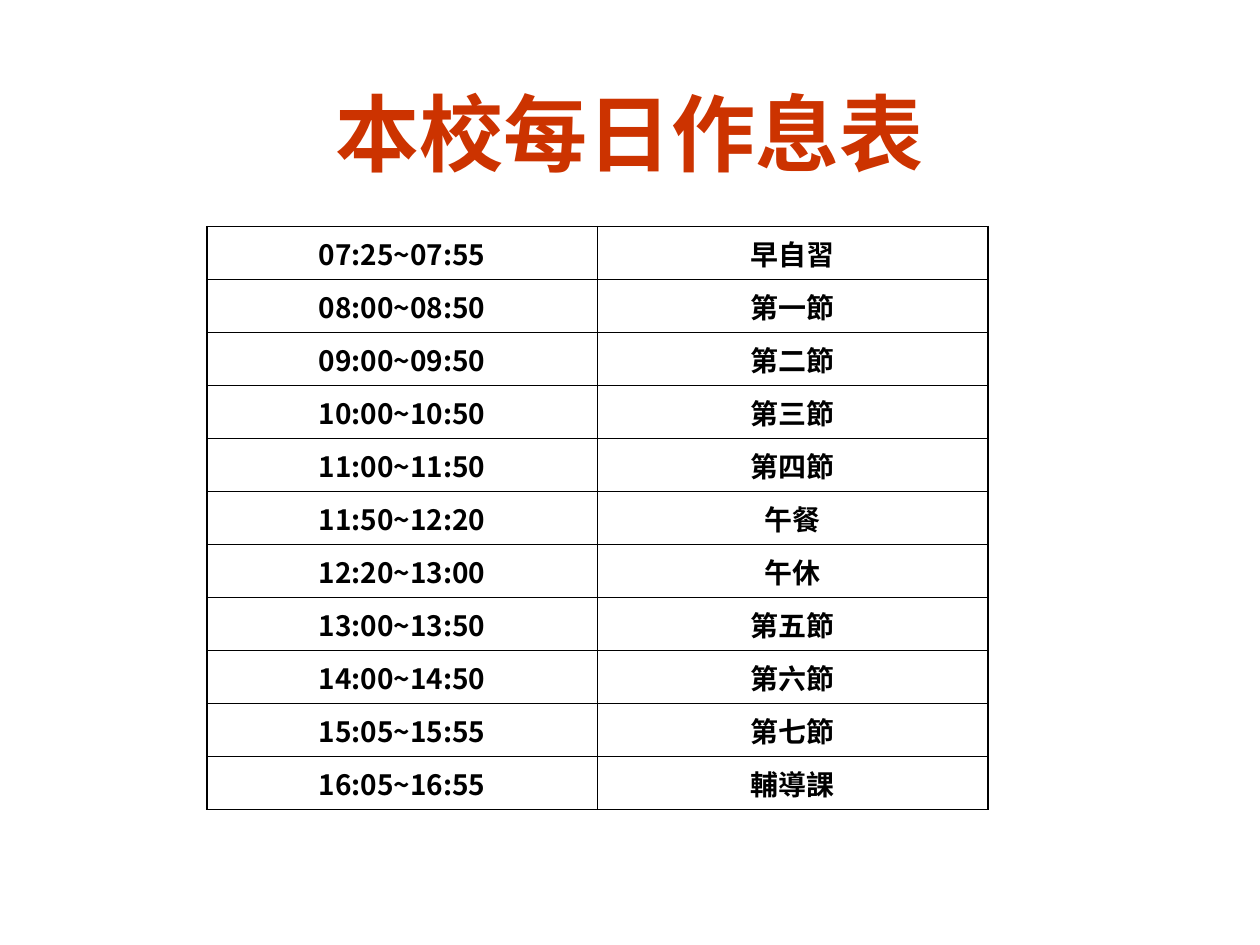
import pptx
import pptx.util
import pptx.dml.color
import pptx.enum.text
import pptx.oxml
import pptx.oxml.ns

Cm = pptx.util.Cm
Pt = pptx.util.Pt
TEXT = pptx.enum.text
HUES = {"title": "CC3300", "ink": "000000"}
EAST = "Noto Sans CJK SC"
HEAD = {"name": "Lato", "size": Pt(48), "bold": True}
BODY = {"name": EAST, "size": Pt(16), "bold": True}
HOURS = [
    ("07:25~07:55", "早自習"),
    ("08:00~08:50", "第一節"),
    ("09:00~09:50", "第二節"),
    ("10:00~10:50", "第三節"),
    ("11:00~11:50", "第四節"),
    ("11:50~12:20", "午餐"),
    ("12:20~13:00", "午休"),
    ("13:00~13:50", "第五節"),
    ("14:00~14:50", "第六節"),
    ("15:05~15:55", "第七節"),
    ("16:05~16:55", "輔導課"),
]


def write(frame, text, style, hue):
    para = frame.paragraphs[0]
    para.alignment = TEXT.PP_ALIGN.CENTER
    run = para.add_run()
    run.text = text
    for key, value in style.items():
        setattr(run.font, key, value)
    run.font.color.rgb = pptx.dml.color.RGBColor.from_string(HUES[hue])
    east = pptx.oxml.parse_xml(
        f'<a:ea {pptx.oxml.ns.nsdecls("a")} typeface="{EAST}"/>')
    run.font._element.append(east)


def border(cell):
    props = cell._tc.get_or_add_tcPr()
    for side in "LRTB":
        props.append(pptx.oxml.parse_xml(
            f'<a:ln{side} {pptx.oxml.ns.nsdecls("a")} w="{Pt(1)}"><a:solidFill>'
            f'<a:srgbClr val="{HUES["ink"]}"/></a:solidFill></a:ln{side}>'))


def title(slide, left, top, width, height):
    shape = slide.shapes.title
    box = {"left": left, "top": top, "width": width, "height": height}
    for key, value in box.items():
        setattr(shape, key, value)
    frame = shape.text_frame
    frame.auto_size = TEXT.MSO_AUTO_SIZE.NONE
    frame.vertical_anchor = TEXT.MSO_ANCHOR.MIDDLE
    write(frame, "本校每日作息表", HEAD, "title")


def hours(slide, left, top, width, height):
    shape = slide.shapes.add_table(len(HOURS), 2, left, top, width, height)
    grid = shape.table
    for flag in ("first_row", "horz_banding"):
        setattr(grid, flag, False)
    for row, texts in zip(grid.rows, HOURS):
        row.height = Cm(0.88)
        for cell, text in zip(row.cells, texts):
            border(cell)
            cell.fill.background()
            cell.vertical_anchor = TEXT.MSO_ANCHOR.MIDDLE
            write(cell.text_frame, text, BODY, "ink")
    shape.height = height


def main():
    deck = pptx.Presentation()
    deck.slide_width, deck.slide_height = Cm(25.4), Cm(19.05)
    slide = deck.slides.add_slide(deck.slide_layouts[5])
    title(slide, Cm(1.9), Cm(1.7), Cm(21.6), Cm(1.9))
    hours(slide, Cm(4.17), Cm(4.57), Cm(15.75), Cm(10.24))
    deck.save("out.pptx")


if __name__ == "__main__":
    main()
